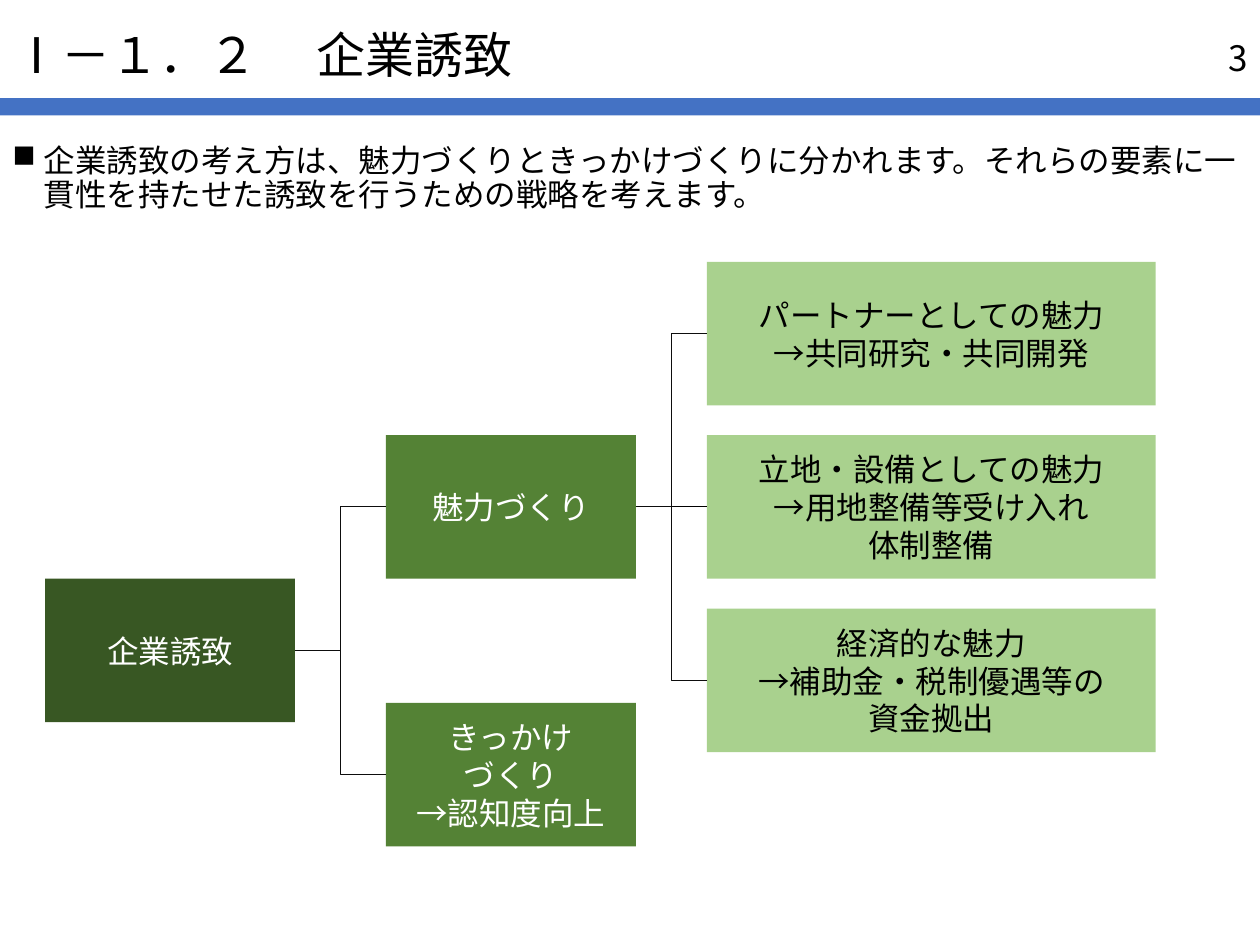
import pptx
import pptx.util
import pptx.oxml.ns
from lxml import etree
from pptx.dml.color import RGBColor
from pptx.enum.shapes import MSO_CONNECTOR, MSO_SHAPE
from pptx.enum.text import MSO_ANCHOR, PP_ALIGN

Pt = pptx.util.Pt
qn = pptx.oxml.ns.qn

FONT = "Noto Sans CJK JP"
BLACK = RGBColor(0x00, 0x00, 0x00)
WHITE = RGBColor(0xFF, 0xFF, 0xFF)
LINE = RGBColor(0x0D, 0x0D, 0x0D)
BLUE = RGBColor(0x44, 0x72, 0xC4)
DARK_GREEN = RGBColor(0x38, 0x57, 0x23)
GREEN = RGBColor(0x54, 0x82, 0x35)
LIGHT_GREEN = RGBColor(0xA9, 0xD1, 0x8E)


def set_text(sp, text, size=18, color=BLACK, align=PP_ALIGN.LEFT,
             anchor=MSO_ANCHOR.MIDDLE, spacing=None, before=None, bullet=None):
    """Fill a shape; \\n starts a paragraph and \\v breaks a line."""
    tf = sp.text_frame
    tf.word_wrap = True
    tf.vertical_anchor = anchor
    for i, line in enumerate(text.split("\n")):
        p = tf.add_paragraph() if i else tf.paragraphs[0]
        p.text = line
        p.alignment = align
        p.line_spacing = spacing
        if before is not None:
            p.space_before = Pt(before)
        if bullet:
            pPr = p._p.get_or_add_pPr()
            pPr.set("marL", str(Pt(18)))
            pPr.set("indent", str(-Pt(18)))
            etree.SubElement(pPr, qn("a:buChar")).set("char", bullet)
        for r in p.runs:
            r.font.size = Pt(size)
            r.font.name = FONT
            r.font.color.rgb = color
            etree.SubElement(r._r.get_or_add_rPr(), qn("a:ea")).set("typeface", FONT)


def add_text(s, box, text, **fmt):
    set_text(s.shapes.add_textbox(*map(Pt, box)), text, **fmt)


def add_rect(s, box, fill):
    sp = s.shapes.add_shape(MSO_SHAPE.RECTANGLE, *map(Pt, box))
    sp.shadow.inherit = False
    sp.fill.solid()
    sp.fill.fore_color.rgb = fill
    sp.line.fill.background()
    return sp


def join(s, parent, child):
    """Link the right side of parent to the left side of child."""
    level = parent.top == child.top
    kind = MSO_CONNECTOR.STRAIGHT if level else MSO_CONNECTOR.ELBOW
    cn = s.shapes.add_connector(kind, 0, 0, 0, 0)
    cn.begin_connect(parent, 3)
    cn.end_connect(child, 1)
    cn.line.color.rgb = BLACK if level else LINE
    cn.line.width = Pt(0.5)
    etree.SubElement(cn._element.spPr, qn("a:effectLst"))


def add_header(s, x, y, w, h):
    # Rule, title and page number
    rule_h = 10
    add_rect(s, (x, y + h - rule_h, w, rule_h), BLUE)
    add_text(s, (x, y + 22.3, w - 162, 21), "Ⅰ－１．２ \u3000企業誘致", size=28, spacing=0.9)
    add_text(s, (x + w - 162, y + 18.7, 162, 28.8), "3", size=20, align=PP_ALIGN.RIGHT)


def add_lead(s, x, y, w, h):
    add_text(s, (x, y, w, h),
             "企業誘致の考え方は、魅力づくりときっかけづくりに分かれます。"
             "それらの要素に一貫性を持たせた誘致を行うための戦略を考えます。",
             anchor=MSO_ANCHOR.TOP, spacing=0.9, before=10, bullet="■")


def add_tree(s, x, y, w, h):
    node_w, node_h, leaf_w, leaf_step = 142.8, 82, 256.4, 99.1
    mid_x, leaf_x = x + 194.8, x + w - leaf_w
    mid_y = y + leaf_step

    def node(left, top, width, fill, color, text):
        sp = add_rect(s, (left, top, width, node_h), fill)
        set_text(sp, text, color=color, align=PP_ALIGN.CENTER)
        return sp

    # Root and its two branches
    root = node(x, mid_y + node_h, node_w, DARK_GREEN, WHITE, "企業誘致")
    appeal = node(mid_x, mid_y, node_w, GREEN, WHITE, "魅力づくり")
    trigger = node(mid_x, y + h - node_h, node_w, GREEN, WHITE,
                   "きっかけ\nづくり\n→認知度向上")
    for branch in (trigger, appeal):
        join(s, root, branch)

    # Three kinds of appeal
    leaves = ("パートナーとしての魅力\v→共同研究・共同開発",
              "立地・設備としての魅力\n→用地整備等受け入れ\v体制整備",
              "経済的な魅力\n→補助金・税制優遇等の\v資金拠出")
    for i, text in enumerate(leaves):
        leaf = node(leaf_x, y + i * leaf_step, leaf_w, LIGHT_GREEN, BLACK, text)
        join(s, appeal, leaf)


def main():
    prs = pptx.Presentation()
    prs.slide_width, prs.slide_height = Pt(720), Pt(540)
    s = prs.slides.add_slide(prs.slide_layouts[6])
    add_header(s, 0, 0, 720, 66)
    add_lead(s, 0, 79.2, 720, 56.2)
    add_tree(s, 25.8, 149.6, 634.6, 334)
    prs.save("out.pptx")


if __name__ == "__main__":
    main()
